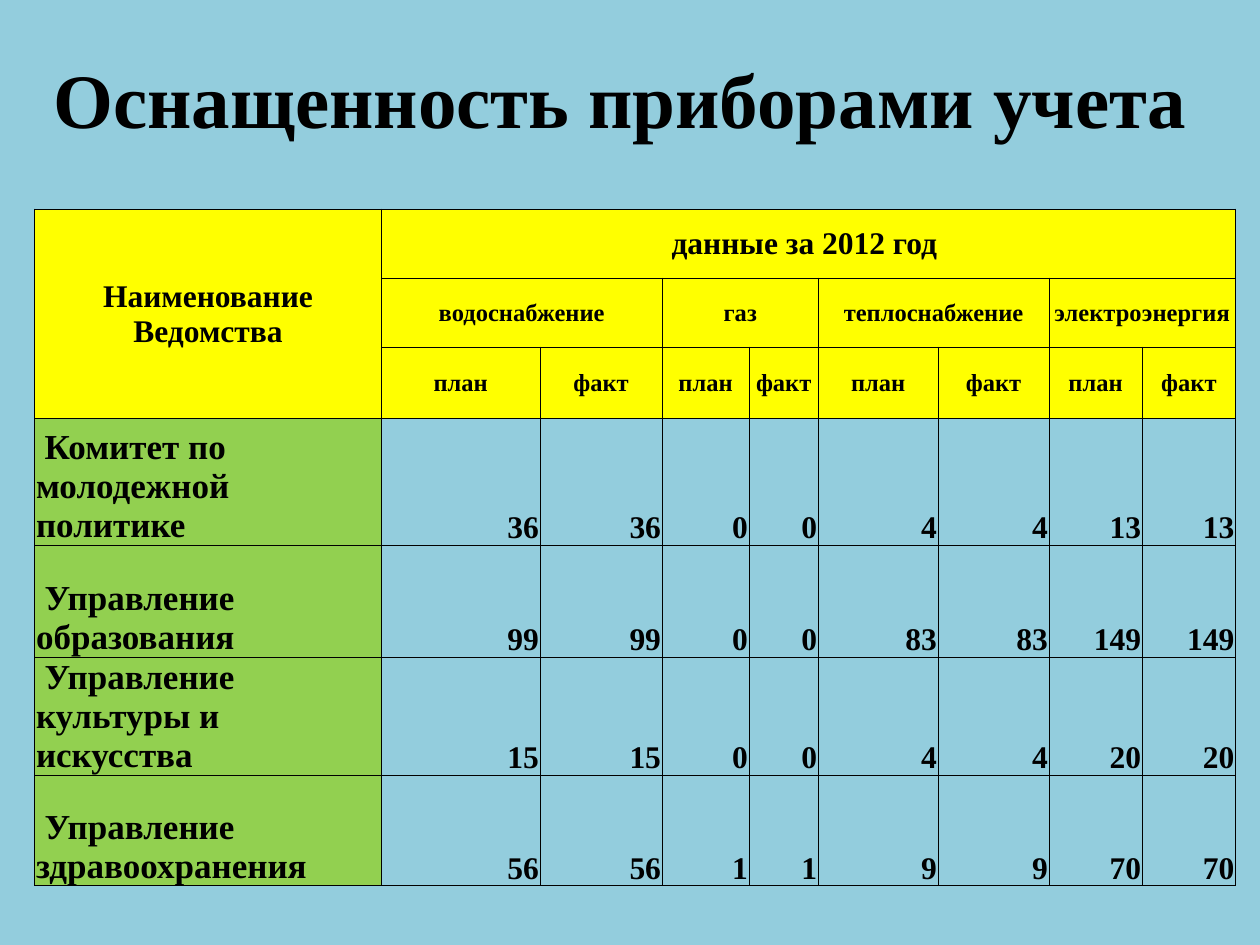
from pptx import Presentation
from pptx.dml.color import RGBColor
from pptx.enum.text import MSO_ANCHOR as Anchor, PP_ALIGN as Align
from pptx.oxml.ns import qn
from pptx.util import Pt
from lxml.etree import SubElement

FONT = "Times New Roman"
BLACK, YELLOW, GREEN, SKY = "000000", "FFFF00", "92D050", "93CDDD"
COLUMN_WIDTHS = [198, 90.7, 69.8, 49.7, 39.6, 68.4, 63.4, 53.3, 53.3]
ROW_HEIGHTS = [39.5, 39.5, 40.5, 72.6, 64, 66.8, 63.4]
RESOURCES = ["водоснабжение", "газ", "теплоснабжение", "электроэнергия"]
DEPARTMENTS = [
    (" Комитет по молодежной политике", [36, 36, 0, 0, 4, 4, 13, 13]),
    (" Управление образования", [99, 99, 0, 0, 83, 83, 149, 149]),
    (" Управление культуры и искусства", [15, 15, 0, 0, 4, 4, 20, 20]),
    (" Управление здравоохранения", [56, 56, 1, 1, 9, 9, 70, 70]),
]


def color(hex_string):
    """Turn a hex string into a colour."""
    return RGBColor.from_string(hex_string)


def write(frame, text, size=18, align=Align.CENTER):
    """Put bold black text into a text frame."""
    paragraph = frame.paragraphs[0]
    paragraph.alignment = align
    run = paragraph.add_run()
    run.text = text
    run.font.name = FONT
    run.font.size = Pt(size)
    run.font.bold = True
    run.font.color.rgb = color(BLACK)


def add_borders(cell, width=0.5):
    """Draw thin black lines on all four sides of a cell."""
    properties = cell._tc.get_or_add_tcPr()
    for side in ("a:lnL", "a:lnR", "a:lnT", "a:lnB"):
        line = SubElement(properties, qn(side), w=str(Pt(width)))
        fill = SubElement(line, qn("a:solidFill"))
        SubElement(fill, qn("a:srgbClr"), val=BLACK)


def style_cell(cell, fill=None, anchor=Anchor.MIDDLE):
    """Set the borders, fill, margins and anchor of a cell."""
    add_borders(cell)
    if fill:
        cell.fill.solid()
        cell.fill.fore_color.rgb = color(fill)
    else:
        cell.fill.background()
    cell.margin_left = cell.margin_right = cell.margin_top = Pt(0.7)
    cell.margin_bottom = Pt(0)
    cell.vertical_anchor = anchor


def add_title(slide, text):
    """Place and fill the title."""
    title = slide.shapes.title
    title.left, title.top, title.width, title.height = Pt(20.2), Pt(0), Pt(669), Pt(111.6)
    title.text_frame.vertical_anchor = Anchor.MIDDLE
    title.text_frame.word_wrap = True
    write(title.text_frame, text, size=44)


def add_grid(slide):
    """Add the empty styled table."""
    grid = slide.shapes.add_table(
        len(ROW_HEIGHTS), len(COLUMN_WIDTHS), Pt(19.9), Pt(119.4),
        Pt(sum(COLUMN_WIDTHS)), Pt(sum(ROW_HEIGHTS))).table
    grid.first_row = grid.horz_banding = False
    for column, width in zip(grid.columns, COLUMN_WIDTHS):
        column.width = Pt(width)
    for row, height in zip(grid.rows, ROW_HEIGHTS):
        row.height = Pt(height)
    return grid


def fill_header(grid):
    """Merge and fill the three header rows."""
    for row in range(3):
        for column in range(len(COLUMN_WIDTHS)):
            style_cell(grid.cell(row, column), YELLOW)
    grid.cell(0, 0).merge(grid.cell(2, 0))
    grid.cell(0, 1).merge(grid.cell(0, 8))
    write(grid.cell(0, 0).text_frame, "Наименование Ведомства")
    write(grid.cell(0, 1).text_frame, "данные за 2012 год ")
    for index, resource in enumerate(RESOURCES):
        plan = 1 + 2 * index
        grid.cell(1, plan).merge(grid.cell(1, plan + 1))
        write(grid.cell(1, plan).text_frame, resource, size=14)
        write(grid.cell(2, plan).text_frame, "план", size=14)
        write(grid.cell(2, plan + 1).text_frame, "факт", size=14)


def fill_departments(grid):
    """Fill one row for each department."""
    for row, (department, counts) in enumerate(DEPARTMENTS, start=3):
        name_cell = grid.cell(row, 0)
        style_cell(name_cell, GREEN, Anchor.BOTTOM)
        write(name_cell.text_frame, department, size=20, align=Align.LEFT)
        for column, count in enumerate(counts, start=1):
            count_cell = grid.cell(row, column)
            style_cell(count_cell, anchor=Anchor.BOTTOM)
            write(count_cell.text_frame, str(count), align=Align.RIGHT)


def main():
    """Build and save the slide."""
    deck = Presentation()
    deck.slide_width, deck.slide_height = Pt(720), Pt(540)
    slide = deck.slides.add_slide(deck.slide_layouts[0])
    subtitle = slide.placeholders[1].element
    subtitle.getparent().remove(subtitle)
    slide.background.fill.solid()
    slide.background.fill.fore_color.rgb = color(SKY)
    add_title(slide, "Оснащенность приборами учета ")
    grid = add_grid(slide)
    fill_header(grid)
    fill_departments(grid)
    deck.save("out.pptx")


if __name__ == "__main__":
    main()
